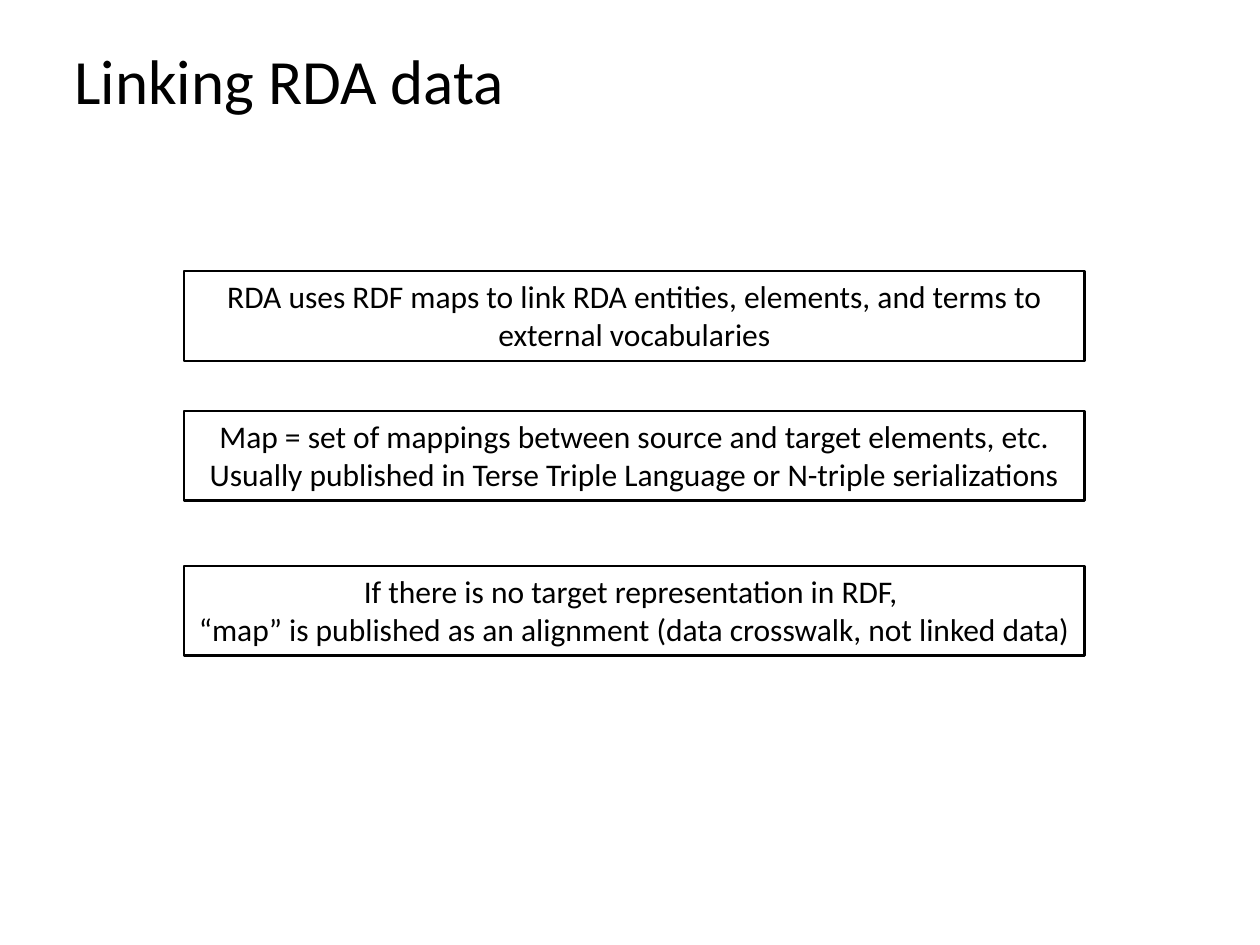
from pptx import Presentation
from pptx import util as u
from pptx.dml.color import RGBColor
from pptx.enum import shapes, text

COLOURS = {"ink": "000000", "paper": "FFFFFF"}
FONT = "Calibri"
WIDTH, HEIGHT = 10, 7.5
NOTE_LEFT, NOTE_WIDTH, NOTE_HEIGHT = 0.146, 0.715, 0.095
NOTES = [
    (0.287, ["RDA uses RDF maps to link RDA entities, elements, and terms to external vocabularies"]),
    (0.435, ["Map = set of mappings between source and target elements, etc.",
             "Usually published in Terse Triple Language or N-triple serializations"]),
    (0.599, ["If there is no target representation in RDF, ",
             "“map” is published as an alignment (data crosswalk, not linked data)"]),
]


def colour(name):
    return RGBColor.from_string(COLOURS[name])


def place(left, top, width, height):
    return (u.Inches(left * WIDTH), u.Inches(top * HEIGHT),
            u.Inches(width * WIDTH), u.Inches(height * HEIGHT))


def write(frame, lines, size, align):
    frame.text = "\n".join(lines)
    frame.auto_size = text.MSO_AUTO_SIZE.SHAPE_TO_FIT_TEXT
    for para in frame.paragraphs:
        para.alignment = align
        for span in para.runs:
            span.font.name = FONT
            span.font.size = u.Pt(size)
            span.font.color.rgb = colour("ink")


def add_title(page, area, title):
    box = page.shapes.add_textbox(*place(*area))
    write(box.text_frame, [title], 36, text.PP_ALIGN.LEFT)
    box.text_frame.word_wrap = False


def add_note(page, area, lines):
    box = page.shapes.add_shape(shapes.MSO_SHAPE.RECTANGLE, *place(*area))
    box.shadow.inherit = False
    box.fill.background()
    box.line.color.rgb = colour("ink")
    box.line.width = u.Pt(1.5)
    write(box.text_frame, lines, 18, text.PP_ALIGN.CENTER)
    box.text_frame.word_wrap = True
    box.text_frame.vertical_anchor = text.MSO_ANCHOR.TOP


def main():
    deck = Presentation()
    deck.slide_width, deck.slide_height = u.Inches(WIDTH), u.Inches(HEIGHT)
    page = deck.slides.add_slide(deck.slide_layouts[6])
    page.background.fill.solid()
    page.background.fill.fore_color.rgb = colour("paper")
    add_title(page, (0.049, 0.037, 0.365, 0.095), "Linking RDA data")
    for top, lines in NOTES:
        add_note(page, (NOTE_LEFT, top, NOTE_WIDTH, NOTE_HEIGHT), lines)
    deck.save("out.pptx")


if __name__ == "__main__":
    main()
